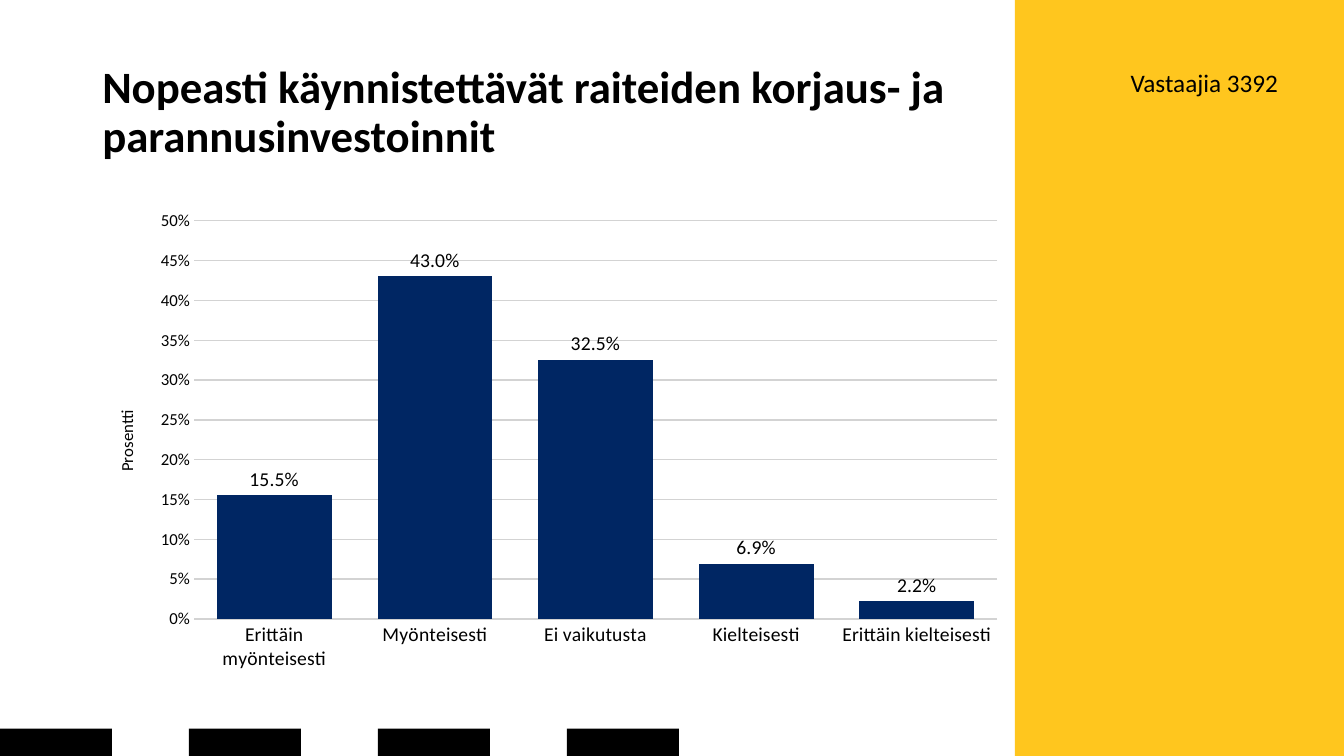
from lxml.etree import SubElement
from pptx import Presentation
from pptx.chart.data import CategoryChartData
from pptx.dml.color import RGBColor
from pptx.enum.chart import XL_CHART_TYPE, XL_LABEL_POSITION, XL_TICK_MARK
from pptx.enum.shapes import MSO_SHAPE
from pptx.enum.text import MSO_ANCHOR, PP_ALIGN
from pptx.oxml.ns import qn
from pptx.util import Pt


def color(value):
    return RGBColor.from_string(value)


def set_font(font, size, bold=False):
    for name, value in {"name": "Calibri", "size": Pt(size), "bold": bold}.items():
        setattr(font, name, value)
    font.color.rgb = color("000000")


presentation = Presentation()
presentation.slide_width = Pt(960)
presentation.slide_height = Pt(540)
slide = presentation.slides.add_slide(presentation.slide_layouts[6])

side_panel = (725, 0, 235, 540, "FFC61E")
footer_blocks = [(135 * index, 520.5, 80, 19.5, "000000") for index in range(4)]
for left, top, width, height, fill in [side_panel, *footer_blocks]:
    shape = slide.shapes.add_shape(
        MSO_SHAPE.RECTANGLE, Pt(left), Pt(top), Pt(width), Pt(height))
    shape.shadow.inherit = False
    shape.fill.solid()
    shape.fill.fore_color.rgb = color(fill)
    shape.line.fill.background()

chart_data = CategoryChartData(number_format="0.0%")
chart_data.categories = ["Erittäin myönteisesti", "Myönteisesti", "Ei vaikutusta",
                         "Kielteisesti", "Erittäin kielteisesti"]
chart_data.add_series("Series 1", [0.155, 0.43, 0.325, 0.069, 0.022])
chart = slide.shapes.add_chart(
    XL_CHART_TYPE.COLUMN_CLUSTERED, Pt(66), Pt(144), Pt(659.5), Pt(342.7), chart_data).chart
chart.has_legend = False
chart.has_title = False
set_font(chart.font, 11)

plot = chart.plots[0]
plot.gap_width = 40
plot.vary_by_categories = False
bars = plot.series[0].format.fill
bars.solid()
bars.fore_color.rgb = color("002663")
plot.has_data_labels = True
label_format = {"show_value": True, "number_format": "0.0%",
                "number_format_is_linked": False,
                "position": XL_LABEL_POSITION.OUTSIDE_END}
for name, value in label_format.items():
    setattr(plot.data_labels, name, value)
set_font(plot.data_labels.font, 14)

for axis, size in [(chart.category_axis, 14), (chart.value_axis, 12)]:
    set_font(axis.tick_labels.font, size)
    axis.format.line.fill.background()
    axis.major_tick_mark = XL_TICK_MARK.INSIDE
    axis.minor_tick_mark = XL_TICK_MARK.NONE

value_axis = chart.value_axis
scale = {"minimum_scale": 0, "maximum_scale": 0.5, "major_unit": 0.05,
         "has_major_gridlines": True}
for name, value in scale.items():
    setattr(value_axis, name, value)
value_axis.tick_labels.number_format = "0%"
value_axis.tick_labels.number_format_is_linked = False
gridline = value_axis.major_gridlines.format.line
gridline.color.rgb = color("D3D3D3")
gridline.width = Pt(1)
axis_title = value_axis.axis_title.text_frame
axis_title.text = "Prosentti"
set_font(axis_title.paragraphs[0].runs[0].font, 12)

plot_area = chart.element.find(".//" + qn("c:plotArea"))
for layout in plot_area.findall(qn("c:layout")):
    plot_area.remove(layout)
layout = SubElement(plot_area, qn("c:layout"))
plot_area.insert(0, layout)
manual_layout = SubElement(layout, qn("c:manualLayout"))
plot_position = {"layoutTarget": "inner", "xMode": "edge", "yMode": "edge",
                 "x": "0.11", "y": "0.04", "w": "0.87", "h": "0.83"}
for name, value in plot_position.items():
    SubElement(manual_layout, qn("c:" + name)).set("val", value)

texts = [
    ("Nopeasti käynnistettävät raiteiden korjaus- ja parannusinvestoinnit",
     (66, 28.8, 659.5, 104.4), 32, True, MSO_ANCHOR.MIDDLE, PP_ALIGN.LEFT, 0.9),
    ("Vastaajia 3392",
     (771, 44.8, 149, 29), 18, False, MSO_ANCHOR.TOP, PP_ALIGN.RIGHT, 1.0),
]
for text, position, size, bold, anchor, alignment, spacing in texts:
    frame = slide.shapes.add_textbox(*map(Pt, position)).text_frame
    frame.word_wrap = True
    frame.vertical_anchor = anchor
    paragraph = frame.paragraphs[0]
    paragraph.text = text
    paragraph.alignment = alignment
    paragraph.line_spacing = spacing
    set_font(paragraph.runs[0].font, size, bold)

presentation.save("out.pptx")
